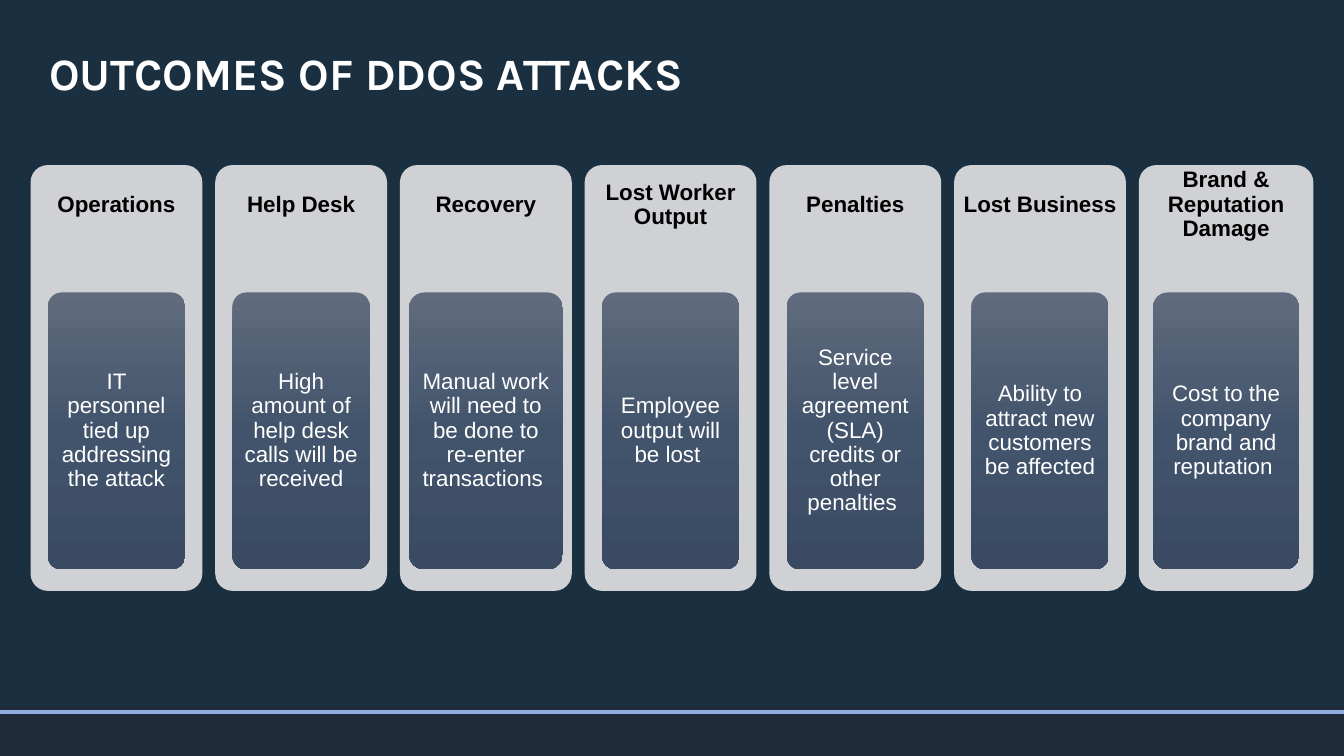
from copy import deepcopy

from pptx import Presentation
from pptx.dml.color import RGBColor
from pptx.enum.shapes import MSO_CONNECTOR, MSO_SHAPE
from pptx.enum.text import MSO_ANCHOR, PP_ALIGN
from pptx.oxml.ns import qn
from pptx.util import Cm, Pt
from lxml import etree

RECTANGLE = MSO_SHAPE.RECTANGLE
ROUNDED = MSO_SHAPE.ROUNDED_RECTANGLE
STRAIGHT = MSO_CONNECTOR.STRAIGHT
MIDDLE = MSO_ANCHOR.MIDDLE
LEFT, CENTER = PP_ALIGN.LEFT, PP_ALIGN.CENTER

BLUE = RGBColor(0x44, 0x72, 0xC4)
NAVY = RGBColor(0x10, 0x25, 0x3F)
TEAL = RGBColor(0x1B, 0x31, 0x40)
FOOTER = RGBColor(0x22, 0x2A, 0x35)
RULE = RGBColor(0x8F, 0xAA, 0xDC)
PANEL = RGBColor(0xCF, 0xD1, 0xD4)
WHITE = RGBColor(0xFF, 0xFF, 0xFF)
BLACK = RGBColor(0, 0, 0)
CARD_STOPS = (
    (0, RGBColor(0x60, 0x6B, 0x7D)),
    (0.5, RGBColor(0x42, 0x54, 0x6C)),
    (1, RGBColor(0x39, 0x4A, 0x62)),
)

PAGE_WIDTH, PAGE_HEIGHT = 33.87, 19.05
RULE_TOP = 17.95
PANEL_PITCH = 4.655
PANEL_WIDTH = 4.33
CARD_WIDTH = 3.46

OUTCOMES = (
    ("Operations", "IT personnel tied up addressing the attack", {}),
    ("Help Desk", "High amount of help desk calls will be received", {}),
    ("Recovery", "Manual work will need to be done to re-enter transactions ",
     {"card_width": 3.88}),
    ("Lost Worker Output", "Employee output will be lost ", {}),
    ("Penalties", "Service level agreement (SLA) credits or other penalties ", {}),
    ("Lost Business", "Ability to attract new customers be affected", {}),
    ("Brand & Reputation Damage", "Cost to the company brand and reputation ",
     {"width": 4.4, "card_width": 3.69}),
)


def write_text(box, text, *, size=16, font="Arial", color=WHITE, bold=False,
               align=CENTER, spacing=0.9, insets=(0.1, 0.08, 0.1, 0.08)):
    frame = box.text_frame
    frame.word_wrap = True
    frame.vertical_anchor = MIDDLE
    (frame.margin_left, frame.margin_top,
     frame.margin_right, frame.margin_bottom) = map(Cm, insets)
    para = frame.paragraphs[0]
    para.alignment = align
    para.line_spacing = spacing
    span = para.add_run()
    span.text = text
    span.font.size = Pt(size)
    span.font.name = font
    span.font.bold = bold
    span.font.color.rgb = color


def add_box(page, kind, left, top, width, height, color=None, alpha=None):
    box = page.shapes.add_shape(kind, Cm(left), Cm(top), Cm(width), Cm(height))
    box.shadow.inherit = False
    box.line.fill.background()
    if color is not None:
        box.fill.solid()
        box.fill.fore_color.rgb = color
    if alpha is not None:
        tint = box.element.spPr.find(".//" + qn("a:srgbClr"))
        etree.SubElement(tint, qn("a:alpha"), val=str(alpha * 1000))
    if kind == ROUNDED:
        box.adjustments[0] = 0.1
    return box


def shade_card(card):
    card.fill.gradient()
    card.fill.gradient_angle = 270
    stops = card.element.spPr.find(".//" + qn("a:gsLst"))
    stops.insert(1, deepcopy(stops[0]))
    for stop, (position, color) in zip(card.fill.gradient_stops, CARD_STOPS):
        stop.position = position
        stop.color.rgb = color


def add_backdrop(page, width, height):
    add_box(page, RECTANGLE, 0, 0, width, height, BLUE)
    add_box(page, RECTANGLE, 0, 0, width, height, NAVY, alpha=90)
    add_box(page, RECTANGLE, 0, 0, width, RULE_TOP, TEAL, alpha=95)
    add_box(page, RECTANGLE, 0, 17.8, width, height - 17.8, FOOTER, alpha=80)
    rule = page.shapes.add_connector(
        STRAIGHT, Cm(0), Cm(RULE_TOP), Cm(width), Cm(RULE_TOP))
    rule.line.color.rgb = RULE
    rule.line.width = Pt(3)
    etree.SubElement(rule.element.spPr, qn("a:effectLst"))


def add_title(page, left, top, width, height):
    title = page.shapes.add_textbox(Cm(left), Cm(top), Cm(width), Cm(height))
    write_text(title, "OUTCOMES OF DDOS ATTACKS", size=32, font="Karla",
               bold=True, align=LEFT, spacing=1, insets=(0.25, 0.13, 0.25, 0.13))


def add_outcome(page, left, top, height, heading, detail,
                width=PANEL_WIDTH, card_width=CARD_WIDTH):
    panel = add_box(page, ROUNDED, left, top, width, height, PANEL)
    write_text(panel, heading, color=BLACK, bold=True,
               insets=(0.05, 0.05, 0.05, 8.77))
    card_left = left + (width - card_width) / 2
    card = add_box(page, ROUNDED, card_left, top + 3.21, card_width, 6.98)
    shade_card(card)
    write_text(card, detail)


def main():
    deck = Presentation()
    deck.slide_width, deck.slide_height = Cm(PAGE_WIDTH), Cm(PAGE_HEIGHT)
    page = deck.slides.add_slide(deck.slide_layouts[6])
    add_backdrop(page, PAGE_WIDTH, PAGE_HEIGHT)
    add_title(page, 0.99, 0.97, 27.1, 1.7)
    for column, (heading, detail, widths) in enumerate(OUTCOMES):
        add_outcome(page, 0.77 + column * PANEL_PITCH, 4.16, 10.73,
                    heading, detail, **widths)
    deck.save("out.pptx")


if __name__ == "__main__":
    main()
